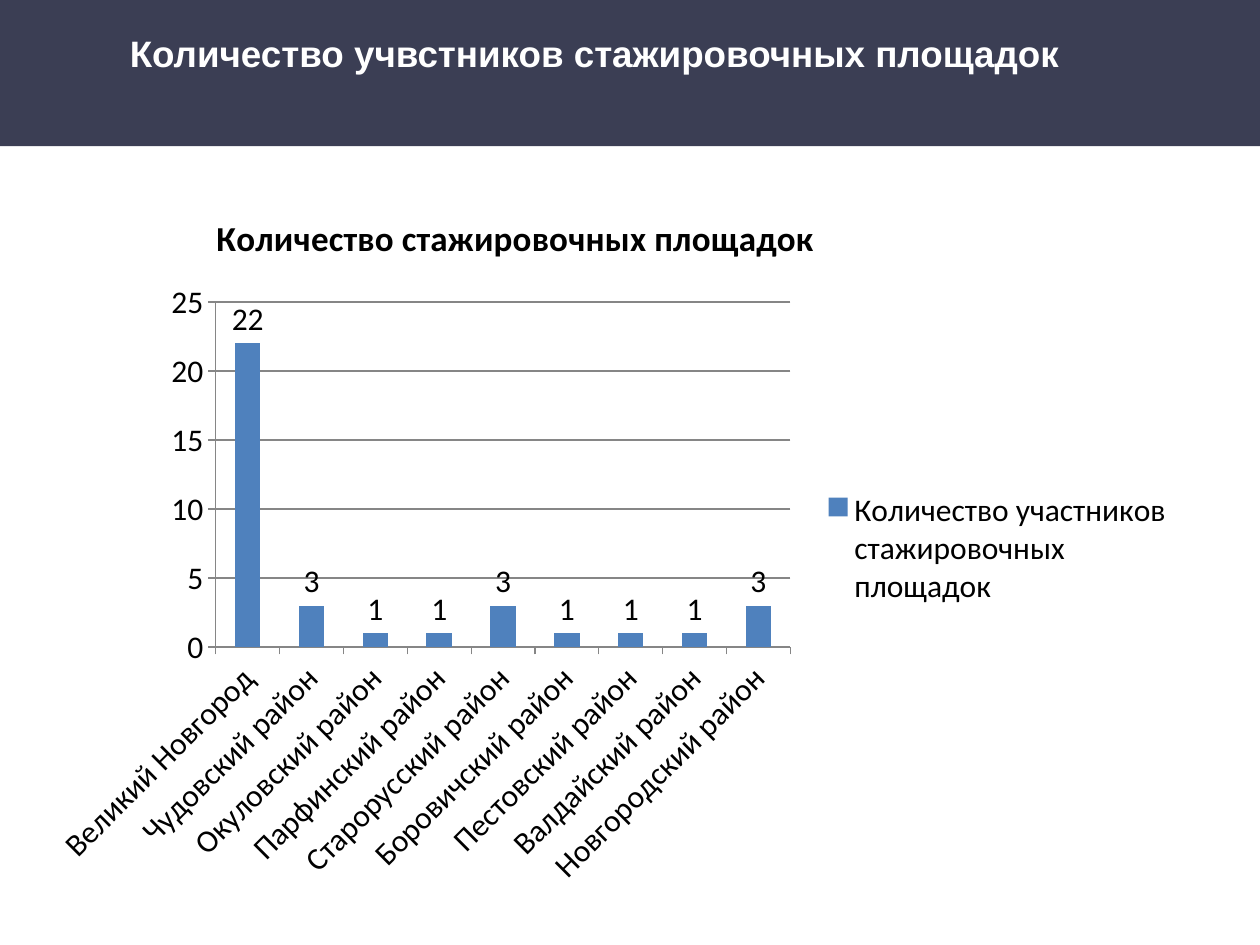
"""Build a slide with a column chart of trainee-site participants by district."""
import pptx
import pptx.chart.data
import pptx.dml.color
import pptx.enum.chart
import pptx.enum.shapes
import pptx.enum.text
import pptx.oxml
import pptx.util

HEAD = "Количество учвстников стажировочных площадок"
TITLE = "Количество стажировочных площадок"
SERIES = "Количество участников стажировочных площадок"
DATA = [
    ("Великий Новгород", 22),
    ("Чудовский район", 3),
    ("Окуловский район", 1),
    ("Парфинский район", 1),
    ("Старорусский район", 3),
    ("Боровичский район", 1),
    ("Пестовский район", 1),
    ("Валдайский район", 1),
    ("Новгородский район", 3),
]
THEME = {
    "band": "3B3E54", "bar": "4F81BD", "line": "868686",
    "white": "FFFFFF", "ink": "000000",
    "head": {"name": "Arial", "size": pptx.util.Pt(21), "bold": True},
    "title": {"name": "Calibri", "size": pptx.util.Pt(20), "bold": True},
    "text": {"name": "Calibri", "size": pptx.util.Pt(18)},
}
BOXES = {
    "band": (0, 0, 10, 1.16),
    "head": (1.03, 0.24, 8.04, 0.35),
    "chart": (0.3, 1.53, 9.12, 5.59),
}
LAYOUT = {
    "title": {"x": 0.15, "y": 0.02},
    "plot": {"x": 0.155, "y": 0.155, "w": 0.5, "h": 0.49},
    "legend": {"x": 0.68, "y": 0.42, "w": 0.31, "h": 0.17},
}
NS = "http://schemas.openxmlformats.org/drawingml/2006/chart"


def tint(name):
    return pptx.dml.color.RGBColor.from_string(THEME[name])


def box(name):
    return [pptx.util.Inches(n) for n in BOXES[name]]


def style(item, vals):
    for key, val in vals.items():
        setattr(item, key, val)


def set_font(font, kind, color):
    style(font, THEME[kind])
    font.color.rgb = tint(color)


def set_line(form):
    form.line.color.rgb = tint("line")
    form.line.width = pptx.util.Pt(0.75)


def place(node, name, index):
    for old in node.findall(f"{{{NS}}}layout"):
        node.remove(old)
    spots = LAYOUT[name]
    inner = '<c:layoutTarget val="inner"/>' if name == "plot" else ""
    modes = "".join(f'<c:{k}Mode val="edge"/>' for k in spots if k in "xy")
    sizes = "".join(f'<c:{k} val="{v}"/>' for k, v in spots.items())
    node.insert(index, pptx.oxml.parse_xml(
        f'<c:layout xmlns:c="{NS}"><c:manualLayout>{inner}{modes}{sizes}'
        '</c:manualLayout></c:layout>'))


def add_band(slide):
    band = slide.shapes.add_shape(
        pptx.enum.shapes.MSO_SHAPE.RECTANGLE, *box("band"))
    band.shadow.inherit = False
    band.fill.solid()
    band.fill.fore_color.rgb = tint("band")
    band.line.fill.background()
    slide.shapes._spTree.insert(2, band._element)


def add_head(slide):
    head = slide.shapes.title
    style(head, dict(zip(("left", "top", "width", "height"), box("head"))))
    frame = head.text_frame
    frame.text = HEAD
    style(frame, {
        "margin_left": 0, "margin_top": 0,
        "margin_right": 0, "margin_bottom": 0, "word_wrap": True,
        "vertical_anchor": pptx.enum.text.MSO_ANCHOR.TOP,
    })
    para = frame.paragraphs[0]
    para.alignment = pptx.enum.text.PP_ALIGN.LEFT
    set_font(para.runs[0].font, "head", "white")


def add_graph(slide):
    enum = pptx.enum.chart
    data = pptx.chart.data.CategoryChartData()
    data.categories = [name for name, _ in DATA]
    data.add_series(SERIES, [val for _, val in DATA])
    chart = slide.shapes.add_chart(
        enum.XL_CHART_TYPE.COLUMN_CLUSTERED, *box("chart"), data).chart
    set_font(chart.font, "text", "ink")

    frame = chart.chart_title.text_frame
    frame.text = TITLE
    set_font(frame.paragraphs[0].runs[0].font, "title", "ink")
    chart.has_legend = True
    style(chart.legend, {
        "position": enum.XL_LEGEND_POSITION.RIGHT,
        "include_in_layout": False,
    })
    set_font(chart.legend.font, "text", "ink")

    for axis in (chart.category_axis, chart.value_axis):
        set_line(axis.format)
        set_font(axis.tick_labels.font, "text", "ink")
        axis.major_tick_mark = enum.XL_TICK_MARK.OUTSIDE
    chart.category_axis._element.txPr.bodyPr.set("rot", "-2700000")
    style(chart.value_axis, {
        "minimum_scale": 0, "maximum_scale": 25, "major_unit": 5,
    })
    set_line(chart.value_axis.major_gridlines.format)

    plot = chart.plots[0]
    style(plot, {
        "gap_width": 150, "vary_by_categories": False,
        "has_data_labels": True,
    })
    labels = plot.data_labels
    style(labels, {
        "show_value": True,
        "position": enum.XL_LABEL_POSITION.OUTSIDE_END,
    })
    set_font(labels.font, "text", "ink")
    fill = plot.series[0].format.fill
    fill.solid()
    fill.fore_color.rgb = tint("bar")

    place(chart.chart_title._element, "title", 1)
    place(chart._chartSpace.chart.plotArea, "plot", 0)
    place(chart.legend._element, "legend", 1)


def main():
    deck = pptx.Presentation()
    deck.slide_width = pptx.util.Inches(10)
    deck.slide_height = pptx.util.Inches(7.5)
    slide = deck.slides.add_slide(deck.slide_layouts[5])
    add_band(slide)
    add_head(slide)
    add_graph(slide)
    deck.save("out.pptx")


if __name__ == "__main__":
    main()
